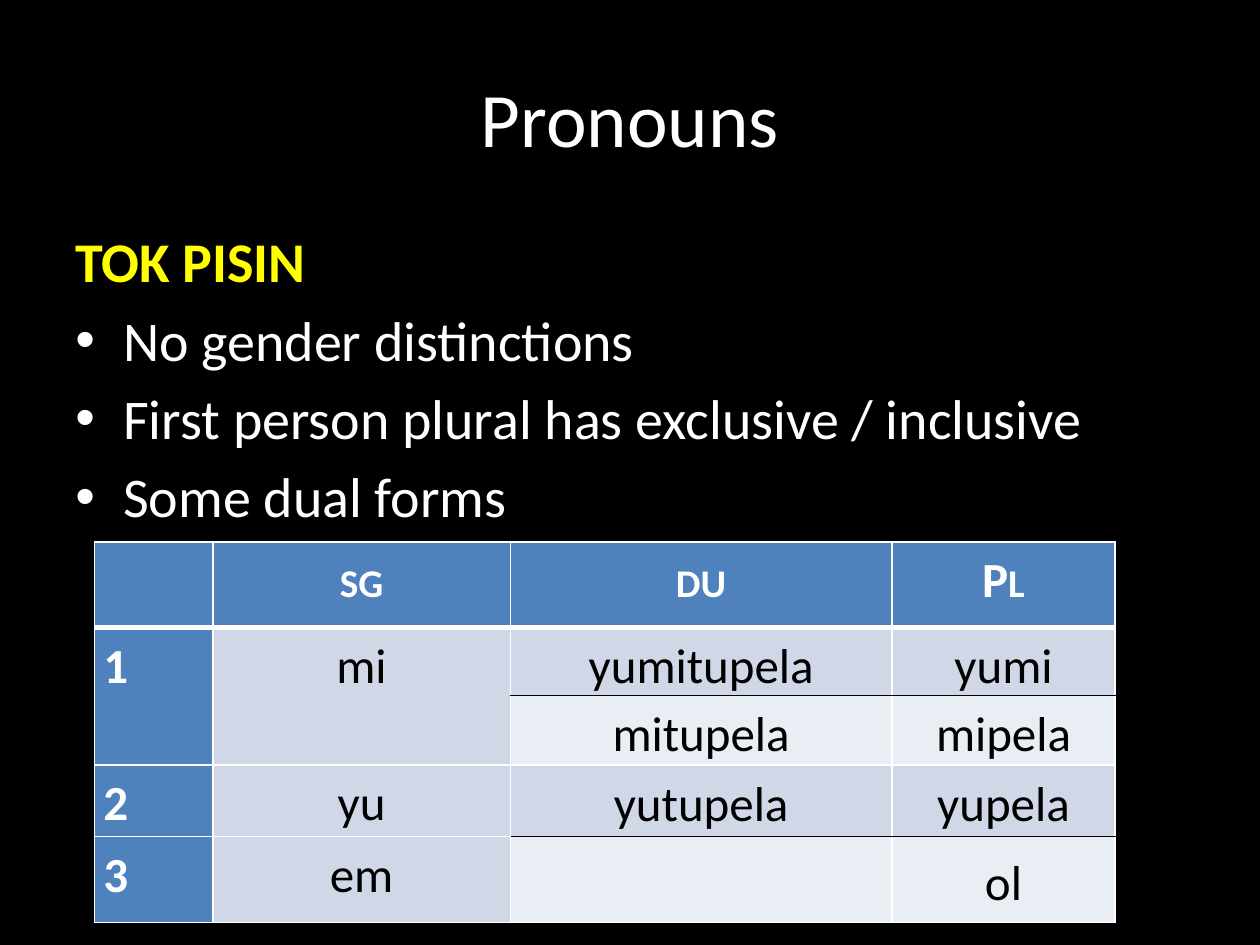
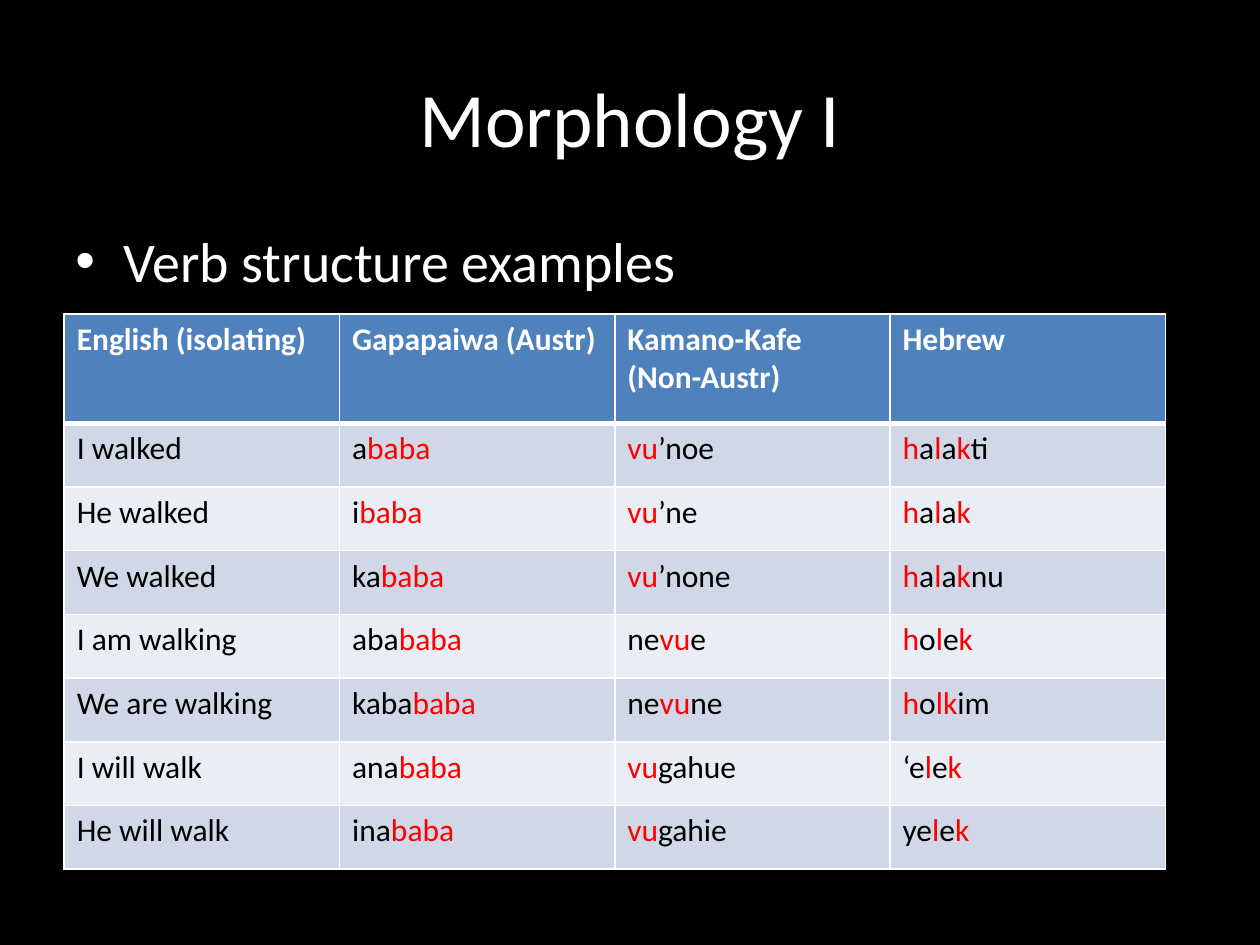
from dataclasses import dataclass

from lxml import etree
from pptx import Presentation
from pptx.dml.color import RGBColor
from pptx.enum.text import MSO_ANCHOR, PP_ALIGN
from pptx.oxml.ns import qn
from pptx.util import Inches, Pt

LEFT, CENTER = PP_ALIGN.LEFT, PP_ALIGN.CENTER
TOP, MIDDLE = MSO_ANCHOR.TOP, MSO_ANCHOR.MIDDLE


@dataclass(frozen=True)
class Theme:
    font: str = "Calibri"
    background: str = "000000"
    light: str = "FFFFFF"
    dark: str = "000000"
    heading: str = "FFFF00"
    root: str = "FF0000"
    header_fill: str = "4F81BD"
    band_fill: str = "D0D8E8"
    pale_fill: str = "E9EDF4"
    title_size: int = 44
    body_size: int = 32
    pronoun_size: int = 28
    verb_size: int = 18
    thin: int = 1
    thick: int = 3


THEME = Theme()

PRONOUNS = [
    ["", "sg", "du", "Pl"],
    ["1", "mi", "yumitupela", "yumi"],
    ["", "", "mitupela", "mipela"],
    ["2", "yu", "yutupela", "yupela"],
    ["", "", "", "ol"],
    ["3", "em", "", ""],
]
PRONOUN_WIDTHS = [0.94, 2.36, 3.03, 1.77]
PRONOUN_HEIGHTS = [0.68, 0.54, 0.55, 0.57, 0, 0.68]
# (first row, column) of each cell that covers two rows
TWO_ROW_CELLS = [(1, 0), (1, 1), (3, 0), (3, 1), (4, 2), (4, 3)]

# Verb roots stand between asterisks
VERBS = [
    ["English (isolating)", "Gapapaiwa (Austr)", "Kamano-Kafe (Non-Austr)", "Hebrew"],
    ["I walked", "a*baba*", "*vu*’noe", "*h*a*l*a*k*ti"],
    ["He walked", "i*baba*", "*vu*’ne", "*h*a*l*a*k*"],
    ["We walked", "ka*baba*", "*vu*’none", "*h*a*l*a*k*nu"],
    ["I am walking", "aba*baba*", "ne*vu*e", "*h*o*l*e*k*"],
    ["We are walking", "kaba*baba*", "ne*vu*ne", "*h*o*lk*im"],
    ["I will walk", "ana*baba*", "*vu*gahue", "‘e*l*e*k*"],
    ["He will walk", "ina*baba*", "*vu*gahie", "ye*l*e*k*"],
]


def write(para, text, *, size, color=THEME.light, bold=False, small_caps=False, align=LEFT):
    """Fill a paragraph; text between asterisks takes the root colour."""
    para.alignment = align
    for index, part in enumerate(text.split("*")):
        if not part:
            continue
        span = para.add_run()
        span.text = part
        span.font.name = THEME.font
        span.font.size = Pt(size)
        span.font.bold = bold
        span.font.color.rgb = RGBColor.from_string(THEME.root if index % 2 else color)
        if small_caps:
            span.font._element.set("cap", "small")


def add_bullet(para):
    properties = para._p.get_or_add_pPr()
    properties.set("marL", str(Inches(0.38)))
    properties.set("indent", str(-Inches(0.38)))
    etree.SubElement(properties, qn("a:buFont"), typeface="Arial")
    etree.SubElement(properties, qn("a:buChar"), char="•")


def add_text_frame(page, left, top, width, height, anchor):
    box = page.shapes.add_textbox(Inches(left), Inches(top), Inches(width), Inches(height))
    box.text_frame.word_wrap = True
    box.text_frame.vertical_anchor = anchor
    return box.text_frame


def add_page(deck, title):
    page = deck.slides.add_slide(deck.slide_layouts[6])
    page.background.fill.solid()
    page.background.fill.fore_color.rgb = RGBColor.from_string(THEME.background)
    frame = add_text_frame(page, 0.5, 0.3, 9, 1.25, MIDDLE)
    write(frame.paragraphs[0], title, size=THEME.title_size, align=CENTER)
    return page


def add_body(page, bullets, heading=None):
    frame = add_text_frame(page, 0.5, 1.75, 9, 4.95, TOP)
    lines = ([heading] if heading else []) + bullets
    for index, line in enumerate(lines):
        para = frame.add_paragraph() if index else frame.paragraphs[0]
        para.space_before = Pt(6.4)
        if line == heading:
            write(para, line, size=THEME.body_size, color=THEME.heading, bold=True)
        else:
            add_bullet(para)
            write(para, line, size=THEME.body_size)


def add_border(cell, side, color, width):
    properties = cell._tc.get_or_add_tcPr()
    line = etree.SubElement(properties, qn(f"a:ln{side}"), w=str(Pt(width)))
    fill = etree.SubElement(line, qn("a:solidFill"))
    etree.SubElement(fill, qn("a:srgbClr"), val=color)


def style_cell(cell, fill, above, below):
    """Frame a cell with white sides and the given (colour, width) rules, then fill it."""
    side_rule = (THEME.light, THEME.thin)
    for side, rule in zip("LRTB", (side_rule, side_rule, above, below)):
        add_border(cell, side, *rule)
    cell.fill.solid()
    cell.fill.fore_color.rgb = RGBColor.from_string(fill)


def add_grid(page, left, top, widths, heights):
    frame = page.shapes.add_table(len(heights), len(widths), Inches(left), Inches(top),
                                  Inches(sum(widths)), Inches(sum(heights)))
    table = frame.table
    for column, width in zip(table.columns, widths):
        column.width = Inches(width)
    for row, height in zip(table.rows, heights):
        row.height = Inches(height)
    return table


def row_rule(boundary, dark_boundaries=()):
    if boundary == 1:
        return THEME.light, THEME.thick
    return (THEME.dark if boundary in dark_boundaries else THEME.light), THEME.thin


def add_pronoun_table(page):
    table = add_grid(page, 0.75, 4.3, PRONOUN_WIDTHS, PRONOUN_HEIGHTS)
    for row, column in TWO_ROW_CELLS:
        table.cell(row, column).merge(table.cell(row + 1, column))
    for row, words in enumerate(PRONOUNS):
        for column, word in enumerate(words):
            cell = table.cell(row, column)
            is_header = row == 0 or column == 0
            is_split = column >= 2
            dark = (2, 4) if is_split else ()
            if is_header:
                fill = THEME.header_fill
            elif is_split and row in (2, 4, 5):
                fill = THEME.pale_fill
            else:
                fill = THEME.band_fill
            style_cell(cell, fill, row_rule(row, dark), row_rule(row + 1, dark))
            cell.margin_left = cell.margin_right = Inches(0.07)
            cell.margin_top = cell.margin_bottom = 0
            cell.vertical_anchor = MIDDLE if is_split and row >= 3 else TOP
            if word:
                para = cell.text_frame.paragraphs[0]
                para.line_spacing = 1.15
                para.space_after = Pt(10)
                write(para, word, size=THEME.pronoun_size, bold=is_header,
                      color=THEME.light if is_header else THEME.dark,
                      small_caps=row == 0, align=CENTER if column else LEFT)


def add_verb_table(page):
    header_height, width, height = 0.87, 8.74, 4.41
    row_count, column_count = len(VERBS) - 1, len(VERBS[0])
    heights = [header_height] + [(height - header_height) / row_count] * row_count
    table = add_grid(page, 0.51, 2.49, [width / column_count] * column_count, heights)
    for row, words in enumerate(VERBS):
        is_header = row == 0
        band = THEME.band_fill if row % 2 else THEME.pale_fill
        for column, word in enumerate(words):
            cell = table.cell(row, column)
            style_cell(cell, THEME.header_fill if is_header else band,
                       row_rule(row), row_rule(row + 1))
            write(cell.text_frame.paragraphs[0], word, size=THEME.verb_size,
                  bold=is_header, color=THEME.light if is_header else THEME.dark)


def main():
    deck = Presentation()
    deck.slide_width, deck.slide_height = Inches(10), Inches(7.5)

    page = add_page(deck, "Pronouns")
    add_body(page, ["No gender distinctions",
                    "First person plural has exclusive / inclusive",
                    "Some dual forms"], heading="TOK PISIN")
    add_pronoun_table(page)

    page = add_page(deck, "Morphology I")
    add_body(page, ["Verb structure examples"])
    add_verb_table(page)

    deck.save("out.pptx")


if __name__ == "__main__":
    main()
